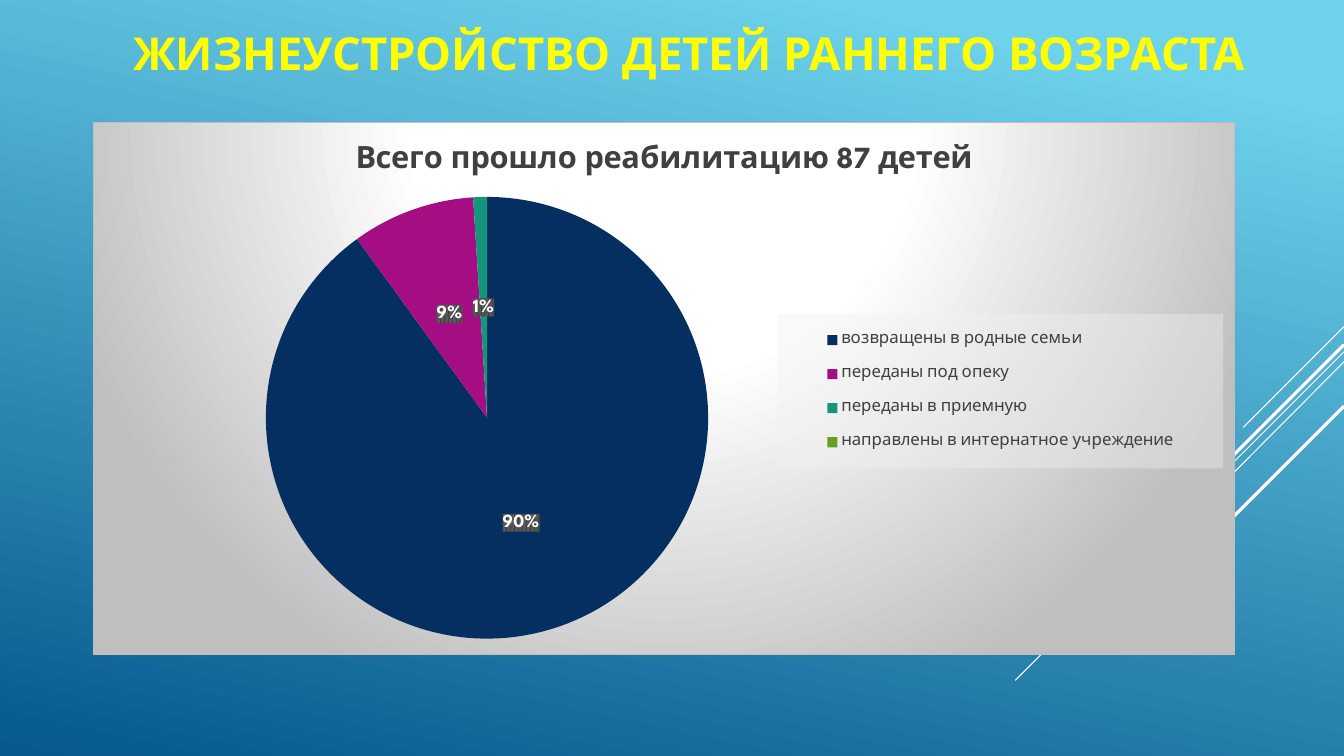
from lxml.etree import SubElement
from pptx import Presentation
from pptx.chart.data import CategoryChartData
from pptx.dml.color import RGBColor
from pptx.enum.chart import XL_CHART_TYPE as ChartType
from pptx.enum.chart import XL_LABEL_POSITION as LabelPosition
from pptx.enum.chart import XL_LEGEND_POSITION as LegendPosition
from pptx.enum.shapes import MSO_CONNECTOR as Connector
from pptx.enum.text import MSO_ANCHOR as Anchor
from pptx.enum.text import MSO_AUTO_SIZE as AutoSize
from pptx.enum.text import PP_ALIGN as Align
from pptx.oxml import parse_xml
from pptx.oxml.ns import nsdecls, qn
from pptx.util import Inches, Pt

WHITE, DARK, YELLOW, GRAY = "FFFFFF", "404040", "FFFF00", "BFBFBF"

RAYS = [
    ((13.33, 3.24), (12.33, 4.24), 0.75),
    ((13.33, 3.49), (10.07, 6.75), 0.75),
    ((13.33, 3.59), (11.26, 5.67), 0.75),
    ((13.33, 3.42), (11.42, 5.33), 2.25),
    ((13.33, 4.03), (11.94, 5.42), 2.25),
]
OUTCOMES = [
    ("возвращены в родные семьи", 90, "052F61"),
    ("переданы под опеку", 9, "A50E82"),
    ("переданы в приемную", 1, "14967C"),
    ("направлены в интернатное учреждение", 0, "6A9E1F"),
]


def color(value):
    return RGBColor.from_string(value)


def solid(value):
    return f'<a:srgbClr val="{value}"/>'


CHART_FILL = (
    f'<a:gradFill><a:gsLst><a:gs pos="0">{solid(WHITE)}</a:gs>'
    f'<a:gs pos="39000">{solid(WHITE)}</a:gs><a:gs pos="100000">{solid(GRAY)}</a:gs></a:gsLst>'
    '<a:path path="circle"><a:fillToRect l="50000" t="-80000" r="50000" b="180000"/></a:path>'
    f'</a:gradFill><a:ln w="9525"><a:solidFill>{solid(GRAY)}</a:solidFill></a:ln>'
)
LEGEND_FILL = '<a:solidFill><a:srgbClr val="F2F2F2"><a:alpha val="39000"/></a:srgbClr></a:solidFill>'
LABEL_FILL = (
    f'<a:pattFill prst="pct75"><a:fgClr>{solid(DARK)}</a:fgClr>'
    f'<a:bgClr>{solid("595959")}</a:bgClr></a:pattFill>'
)


class SlideBuilder:
    font_name = "League Spartan"

    def __init__(self, slide):
        self.slide = slide

    def style(self, font, size, value, bold=False):
        settings = {"name": self.font_name, "size": Pt(size), "bold": bold}
        for name, setting in settings.items():
            setattr(font, name, setting)
        font.color.rgb = color(value)

    def background(self, stops, angle):
        fill = self.slide.background.fill
        fill.gradient()
        fill.gradient_angle = angle
        for stop, (position, value) in zip(fill.gradient_stops, stops):
            stop.position = position
            stop.color.rgb = color(value)

    def ray(self, start, end, width):
        points = [Inches(length) for length in start + end]
        line = self.slide.shapes.add_connector(Connector.STRAIGHT, *points)
        line.line.color.rgb = color(WHITE)
        line.line.width = Pt(width)
        SubElement(line._element.spPr, qn("a:effectLst"))

    def title(self, text, box):
        shape = self.slide.shapes.title
        self.slide.shapes._spTree.append(shape._element)
        for name, length in zip(("left", "top", "width", "height"), box):
            setattr(shape, name, Inches(length))
        frame = shape.text_frame
        settings = {
            "word_wrap": True,
            "auto_size": AutoSize.NONE,
            "vertical_anchor": Anchor.MIDDLE,
            "margin_left": Inches(0.69),
        }
        for name, setting in settings.items():
            setattr(frame, name, setting)
        paragraph = frame.paragraphs[0]
        paragraph.alignment = Align.CENTER
        run = paragraph.add_run()
        run.text = text
        self.style(run.font, 32.4, YELLOW, True)

    def layout(self, box, inner=False):
        target = '<c:layoutTarget val="inner"/>' if inner else ""
        modes = "".join(f'<c:{name}Mode val="edge"/>' for name in "xy")
        sizes = "".join(f'<c:{name} val="{share}"/>' for name, share in zip("xywh", box))
        return parse_xml(
            f'<c:layout {nsdecls("c")}><c:manualLayout>{target}{modes}{sizes}</c:manualLayout></c:layout>'
        )

    def chart_fill(self, element, content):
        properties = parse_xml(f'<c:spPr {nsdecls("c", "a")}>{content}</c:spPr>')
        element.find(qn("c:txPr")).addprevious(properties)

    def remove_layout(self, element):
        for old in element.findall(qn("c:layout")):
            element.remove(old)

    def pie(self, title, outcomes, box):
        data = CategoryChartData()
        data.categories = [name for name, _, _ in outcomes]
        data.add_series(title, [value for _, value, _ in outcomes])
        frame = self.slide.shapes.add_chart(ChartType.PIE, *map(Inches, box), data)
        chart = frame.chart
        self.style(chart.font, 10, WHITE)
        self.chart_fill(chart._chartSpace, CHART_FILL)
        chart.has_title = True
        paragraph = chart.chart_title.text_frame.paragraphs[0]
        run = paragraph.add_run()
        run.text = title
        self.style(run.font, 22, DARK, True)
        chart.chart_title.include_in_layout = False
        self.pie_legend(chart)
        self.pie_slices(chart.plots[0], outcomes)
        area = chart._chartSpace.chart.plotArea
        self.remove_layout(area)
        area.insert(0, self.layout((0.15, 0.14, 0.39, 0.83), True))

    def pie_legend(self, chart):
        chart.has_legend = True
        legend = chart.legend
        legend.position = LegendPosition.RIGHT
        legend.include_in_layout = False
        self.style(legend.font, 12, DARK)
        element = legend._element
        self.remove_layout(element)
        element.find(qn("c:overlay")).addprevious(self.layout((0.6, 0.36, 0.39, 0.29)))
        self.chart_fill(element, LEGEND_FILL)

    def pie_slices(self, plot, outcomes):
        plot.vary_by_categories = True
        series = plot.series[0]
        for index, (_, _, value) in enumerate(outcomes):
            fill = series.points[index].format.fill
            fill.solid()
            fill.fore_color.rgb = color(value)
        labels = series.data_labels
        settings = {
            "show_percentage": True,
            "show_value": False,
            "number_format": "0%",
            "number_format_is_linked": False,
            "position": LabelPosition.CENTER,
        }
        for name, setting in settings.items():
            setattr(labels, name, setting)
        self.style(labels.font, 13.3, WHITE, True)
        self.chart_fill(labels._element, LABEL_FILL)
        hidden = f'<c:dLbl {nsdecls("c")}><c:idx val="{len(outcomes) - 1}"/><c:delete val="1"/></c:dLbl>'
        labels._element.insert(0, parse_xml(hidden))


def main():
    presentation = Presentation()
    presentation.slide_width = Inches(13.33)
    presentation.slide_height = Inches(7.5)
    builder = SlideBuilder(presentation.slides.add_slide(presentation.slide_layouts[5]))
    builder.background([(0.1, "6ED2EB"), (1, "06588E")], 258)
    for ray in RAYS:
        builder.ray(*ray)
    builder.title("ЖИЗНЕУСТРОЙСТВО ДЕТЕЙ РАННЕГО ВОЗРАСТА", (0.2, 0.18, 12.68, 0.68))
    builder.pie("Всего прошло реабилитацию 87 детей", OUTCOMES, (0.92, 1.21, 11.33, 5.29))
    presentation.save("out.pptx")


if __name__ == "__main__":
    main()
